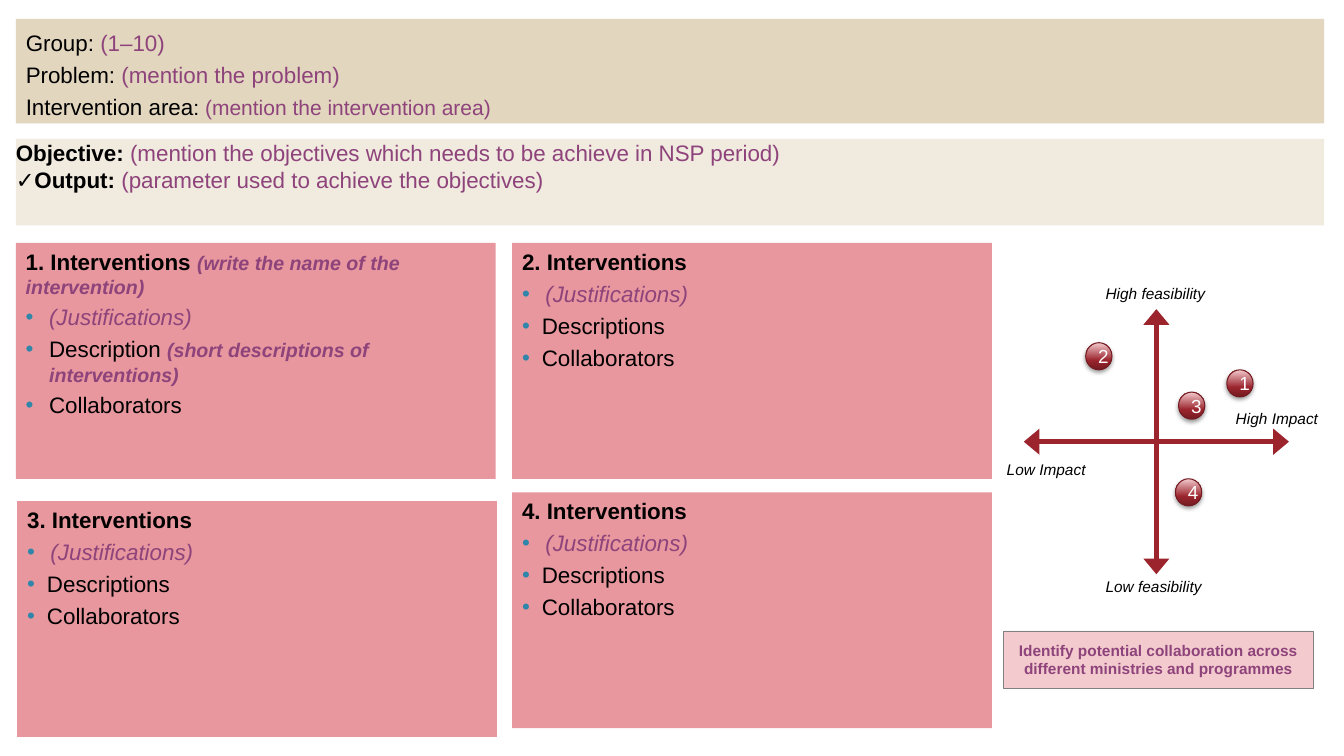
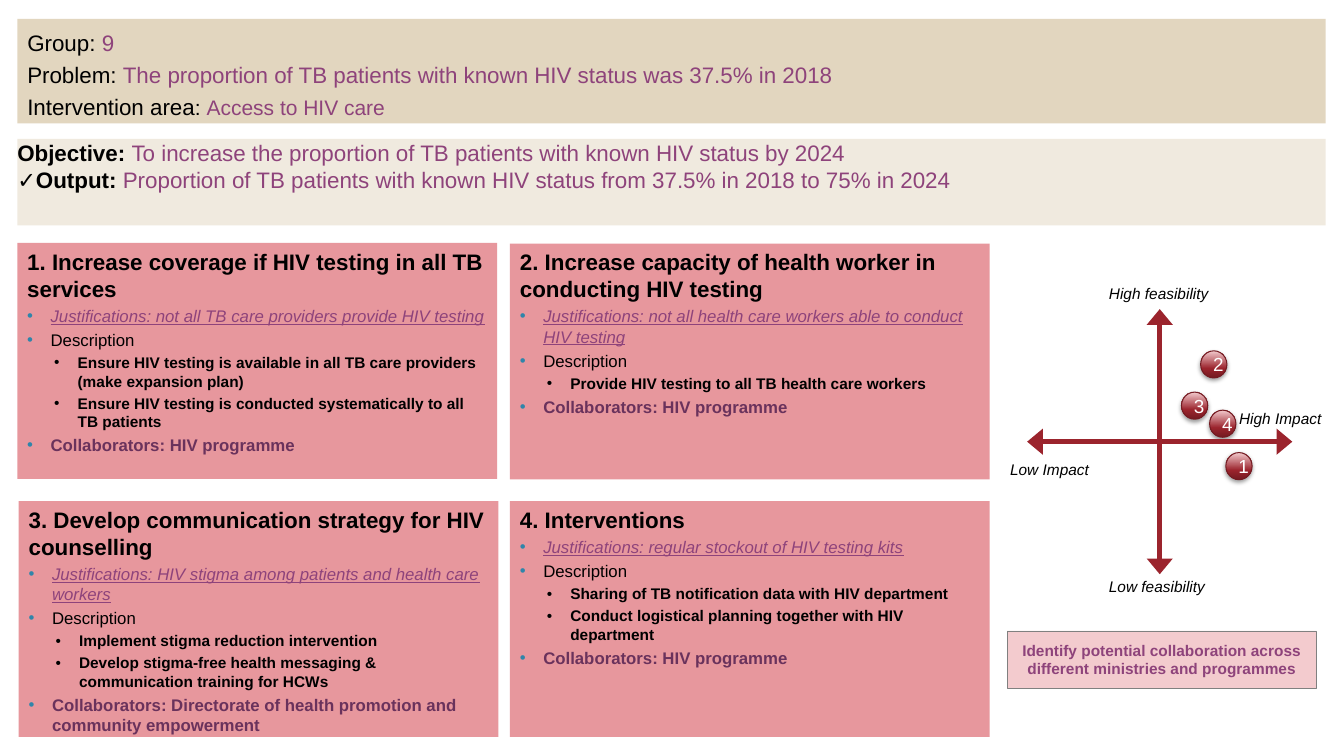
from copy import deepcopy

from lxml import etree
from pptx import Presentation
from pptx.dml.color import RGBColor
from pptx.enum.shapes import MSO_CONNECTOR, MSO_SHAPE
from pptx.enum.text import MSO_ANCHOR, PP_ALIGN
from pptx.oxml.ns import qn
from pptx.util import Pt

COLORS = {
    "sand": "E2D6BF", "cream": "F0EADF", "rose": "E7979D", "pink": "F3CBCE",
    "red": "9B242D", "dark_red": "741B22", "purple": "8E437B", "plum": "6A325C",
    "blue": "2F85AA", "gray": "808080", "black": "000000", "white": "FFFFFF",
}
FONT = "Arial"
STYLES = {
    "label": {"size": 16},
    "small_label": {"size": 15},
    "answer": {"size": 16, "color": "purple"},
    "small_answer": {"size": 15, "color": "purple"},
    "heading": {"size": 16, "bold": True},
    "hint": {"size": 14, "color": "purple", "bold": True, "italic": True},
    "reason": {"size": 16, "color": "purple", "italic": True},
    "reason_line": {"size": 12, "color": "purple", "italic": True, "underline": True},
    "body": {"size": 12},
    "action": {"size": 11, "bold": True},
    "partner": {"size": 12, "color": "plum", "bold": True},
    "axis": {"size": 11, "italic": True},
    "note": {"size": 11, "color": "purple", "bold": True},
    "marker": {"size": 13.5, "color": "white"},
}
# left margin, hanging indent, level, bullet colour
BULLETS = {
    "bullet": (16.7, 16.7, 0, "blue"),
    "close": (14.2, 14.2, 0, "blue"),
    "sub": (36, 16.7, 1, "black"),
}

CARD_SIZE = (342.7, 168.5)
BAND_WIDTH = 934.6
AXIS_Y, AXIS_HALF = 315.5, 94.7
MARKER_SIZE = (18.8, 19.4)
# offsets from the crossing of the axes, then width
AXIS_LABELS = [
    ("Low Impact", -106.9, 12.8, 60),
    ("Low feasibility", -36.3, 97, 72),
    ("High feasibility", -36.3, -112.5, 72),
    ("High Impact", 56.7, -23.2, 62.6),
]
NOTE = "Identify potential collaboration across different ministries and programmes"


def template_card(number):
    return [
        ("plain", [(f"{number}. Interventions", "heading")]),
        ("bullet", [("(Justifications)", "reason")]),
        ("close", [("Descriptions", "label")]),
        ("close", [("Collaborators", "label")]),
    ]


def filled_card(title, justification, actions, collaborators):
    return [
        ("plain", [(title, "heading")]),
        ("bullet", [(f"Justifications: {justification}", "reason_line")]),
        ("bullet", [("Description", "body")]),
        *[("sub", [(action, "action")]) for action in actions],
        ("bullet", [(f"Collaborators: {collaborators}", "partner")]),
    ]


GUIDE_CARD = [
    ("plain", [("1. Interventions ", "heading"),
               ("(write the name of the intervention)", "hint")]),
    ("bullet", [("(Justifications)", "reason")]),
    ("bullet", [("Description ", "label"),
                ("(short descriptions of interventions)", "hint")]),
    ("bullet", [("Collaborators", "label")]),
]

SLIDES = [
    {
        "left": 11.3, "axis_x": 826,
        "group": "(1–10)",
        "problem": "(mention the problem)",
        "area": "(mention the intervention area)",
        "objective": "(mention the objectives which needs to be achieve in NSP period)",
        "output": "(parameter used to achieve the objectives)",
        "cards": [
            (11.3, 173.6, GUIDE_CARD),
            (12.3, 358, template_card(3)),
            (365.8, 173.6, template_card(2)),
            (365.8, 351.7, template_card(4)),
        ],
        "markers": [("2", -50.5, -70.7), ("1", 50.3, -51.3),
                    ("3", 15.8, -35.4), ("4", 13.6, 26.5)],
    },
    {
        "left": 12.4, "axis_x": 828.4,
        "group": "9",
        "problem": "The proportion of TB patients with known HIV status was 37.5% in 2018",
        "area": "Access to HIV care",
        "objective": "To increase the proportion of TB patients with known HIV status by 2024",
        "output": "Proportion of TB patients with known HIV status from 37.5% in 2018 "
                  "to 75% in 2024",
        "cards": [
            (12.4, 173.6, filled_card(
                "1. Increase coverage if HIV testing in all TB services",
                "not all TB care providers provide HIV testing",
                ["Ensure HIV testing is available in all TB care providers "
                 "(make expansion plan)",
                 "Ensure HIV testing is conducted systematically to all TB patients"],
                "HIV programme")),
            (13.4, 358, filled_card(
                "3. Develop communication strategy for HIV counselling",
                "HIV stigma among patients and health care workers",
                ["Implement stigma reduction intervention",
                 "Develop stigma-free health messaging & communication training for HCWs"],
                "Directorate of health promotion and community empowerment")),
            (364.3, 174, filled_card(
                "2. Increase capacity of health worker in conducting HIV testing",
                "not all health care workers able to conduct HIV testing",
                ["Provide HIV testing to all TB health care workers"],
                "HIV programme")),
            (364.3, 358, filled_card(
                "4. Interventions",
                "regular stockout of HIV testing kits",
                ["Sharing of TB notification data with HIV department",
                 "Conduct logistical planning together with HIV department"],
                "HIV programme")),
        ],
        "markers": [("2", 29.2, -64.9), ("1", 47.2, 7.8),
                    ("3", 15.5, -35.4), ("4", 35.6, -22.5)],
    },
]


def rgb(name):
    return RGBColor.from_string(COLORS[name])


def add_run(paragraph, text, size, color="black", bold=False, italic=False, underline=False):
    run = paragraph.add_run()
    run.text = text
    font = run.font
    font.name, font.size = FONT, Pt(size)
    font.bold, font.italic, font.underline = bold, italic, underline
    font.color.rgb = rgb(color)


def add_bullet(paragraph, kind):
    margin, hanging, level, color = BULLETS[kind]
    paragraph.level = level
    properties = paragraph._p.get_or_add_pPr()
    properties.set("marL", str(Pt(margin)))
    properties.set("indent", str(-Pt(hanging)))
    bullet_color = etree.SubElement(properties, qn("a:buClr"))
    etree.SubElement(bullet_color, qn("a:srgbClr"), val=COLORS[color])
    etree.SubElement(properties, qn("a:buFont"), typeface=FONT)
    etree.SubElement(properties, qn("a:buChar"), char="•")


def write_text(shape, paragraphs, align=PP_ALIGN.LEFT, anchor=MSO_ANCHOR.TOP,
               insets=(7.2, 3.6), line_spacing=None, gap=0):
    """Fill a shape with (kind, runs) paragraphs; gap is a share of the text size."""
    frame = shape.text_frame
    frame.word_wrap = True
    frame.vertical_anchor = anchor
    frame.margin_left = frame.margin_right = Pt(insets[0])
    frame.margin_top = frame.margin_bottom = Pt(insets[1])
    for index, (kind, runs) in enumerate(paragraphs):
        paragraph = frame.add_paragraph() if index else frame.paragraphs[0]
        if kind in BULLETS:
            add_bullet(paragraph, kind)
        paragraph.alignment = align
        if line_spacing:
            paragraph.line_spacing = Pt(line_spacing)
        if index and gap:
            paragraph.space_before = Pt(gap * STYLES[runs[0][1]]["size"])
        for text, style in runs:
            add_run(paragraph, text, **STYLES[style])


def add_box(slide, left, top, width, height, fill, paragraphs, line=None, **text_format):
    shape = slide.shapes.add_shape(
        MSO_SHAPE.RECTANGLE, Pt(left), Pt(top), Pt(width), Pt(height))
    shape.shadow.inherit = False
    shape.fill.solid()
    shape.fill.fore_color.rgb = rgb(fill)
    if line:
        shape.line.color.rgb = rgb(line)
        shape.line.width = Pt(0.5)
    else:
        shape.line.fill.background()
    write_text(shape, paragraphs, **text_format)


def add_marker(slide, left, top, number):
    shape = slide.shapes.add_shape(
        MSO_SHAPE.OVAL, Pt(left), Pt(top), *map(Pt, MARKER_SIZE))
    shape.shadow.inherit = False
    shape.fill.gradient()
    shape.fill.gradient_angle = 90
    stop_list = shape._element.spPr.find(qn("a:gradFill")).find(qn("a:gsLst"))
    stop_list.append(deepcopy(stop_list[-1]))
    stops = zip(shape.fill.gradient_stops, [(0, "dark_red"), (0.35, "red"), (1, "pink")])
    for stop, (position, color) in stops:
        stop.position = position
        stop.color.rgb = rgb(color)
    shape.line.color.rgb = rgb("dark_red")
    shape.line.width = Pt(0.75)
    effects = shape._element.spPr.find(qn("a:effectLst"))
    shadow = etree.SubElement(
        effects, qn("a:outerShdw"), blurRad=str(Pt(3.1)), dist=str(Pt(1.6)),
        dir="5400000", rotWithShape="0")
    shadow_color = etree.SubElement(shadow, qn("a:srgbClr"), val=COLORS["black"])
    etree.SubElement(shadow_color, qn("a:alpha"), val="38000")
    write_text(shape, [("plain", [(number, "marker")])],
               align=PP_ALIGN.CENTER, anchor=MSO_ANCHOR.MIDDLE)


def add_axis(slide, x, half_width, half_height):
    connector = slide.shapes.add_connector(
        MSO_CONNECTOR.STRAIGHT, Pt(x - half_width), Pt(AXIS_Y - half_height),
        Pt(x + half_width), Pt(AXIS_Y + half_height))
    connector.line.color.rgb = rgb("red")
    connector.line.width = Pt(3.75)
    line = connector.line._get_or_add_ln()
    for end in ("a:headEnd", "a:tailEnd"):
        etree.SubElement(line, qn(end), type="triangle", w="lg", len="med")
    etree.SubElement(connector._element.spPr, qn("a:effectLst"))


def add_feasibility_map(slide, x, markers):
    for number, across, down in markers:
        add_marker(slide, x + across, AXIS_Y + down, number)
    add_axis(slide, x, 0, AXIS_HALF)
    add_axis(slide, x, AXIS_HALF, 0)
    for text, across, down, width in AXIS_LABELS:
        label = slide.shapes.add_textbox(
            Pt(x + across), Pt(AXIS_Y + down), Pt(width), Pt(23))
        write_text(label, [("plain", [(text, "axis")])], insets=(0, 0))
    add_box(slide, x - 109, AXIS_Y + 135.2, 221, 41, "pink",
            [("plain", [(NOTE, "note")])], line="gray",
            align=PP_ALIGN.CENTER, insets=(7.2, 7.2))


def add_plan(presentation, plan):
    slide = presentation.slides.add_slide(presentation.slide_layouts[6])
    add_box(slide, plan["left"], 13.4, BAND_WIDTH, 74.8, "sand", [
        ("plain", [("Group: ", "label"), (plan["group"], "answer")]),
        ("plain", [("Problem: ", "label"), (plan["problem"], "answer")]),
        ("plain", [("Intervention area", "label"), (": ", "small_label"),
                   (plan["area"], "small_answer")]),
    ], line_spacing=23)
    for left, top, paragraphs in plan["cards"]:
        add_box(slide, left, top, *CARD_SIZE, "rose", paragraphs, gap=0.23)
    add_box(slide, plan["left"], 99.3, BAND_WIDTH, 61.8, "cream", [
        ("plain", [("Objective: ", "heading"), (plan["objective"], "answer")]),
        ("plain", [("✓Output: ", "heading"), (plan["output"], "answer")]),
    ], insets=(0, 0))
    add_feasibility_map(slide, plan["axis_x"], plan["markers"])


def main():
    presentation = Presentation()
    presentation.slide_width, presentation.slide_height = Pt(960), Pt(540)
    for plan in SLIDES:
        add_plan(presentation, plan)
    presentation.save("out.pptx")


if __name__ == "__main__":
    main()
